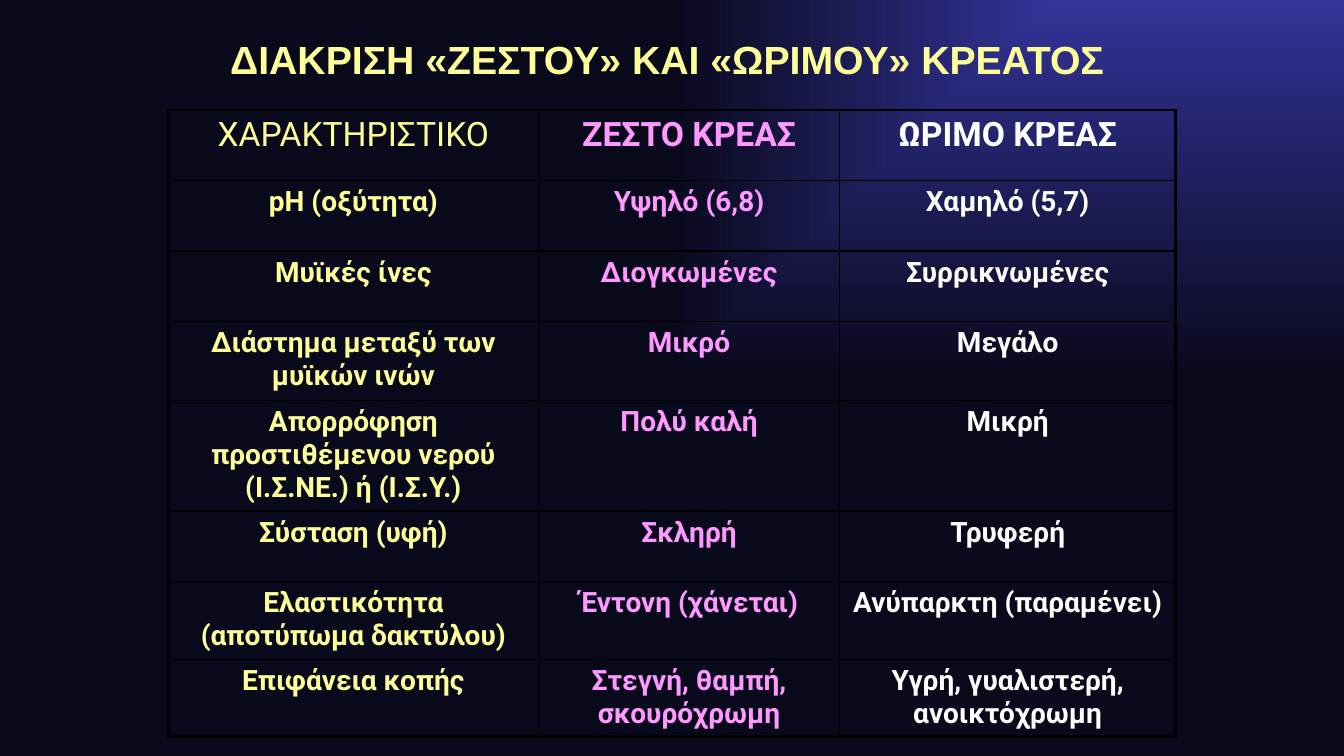
from lxml import etree
from pptx import Presentation
from pptx.dml.color import RGBColor
from pptx.enum.text import MSO_ANCHOR, MSO_AUTO_SIZE, PP_ALIGN
from pptx.oxml.ns import qn
from pptx.util import Inches, Pt

CENTER = PP_ALIGN.CENTER
MIDDLE = MSO_ANCHOR.MIDDLE
NO_AUTOFIT = MSO_AUTO_SIZE.NONE

TITLE = "ΔΙΑΚΡΙΣΗ «ΖΕΣΤΟΥ» ΚΑΙ «ΩΡΙΜΟΥ» ΚΡΕΑΤΟΣ "
ROWS = [
    ("ΧΑΡΑΚΤΗΡΙΣΤΙΚΟ", "ΖΕΣΤΟ ΚΡΕΑΣ", "ΩΡΙΜΟ ΚΡΕΑΣ"),
    ("pH (οξύτητα)", "Υψηλό (6,8)", "Χαμηλό (5,7)"),
    ("Μυϊκές ίνες", "Διογκωμένες", "Συρρικνωμένες"),
    ("Διάστημα μεταξύ των μυϊκών ινών", "Μικρό", "Μεγάλο"),
    ("Απορρόφηση προστιθέμενου νερού (Ι.Σ.ΝΕ.) ή (Ι.Σ.Υ.)", "Πολύ καλή", "Μικρή"),
    ("Σύσταση (υφή)", "Σκληρή", "Τρυφερή"),
    ("Ελαστικότητα (αποτύπωμα δακτύλου)", "Έντονη (χάνεται)", "Ανύπαρκτη (παραμένει)"),
    ("Επιφάνεια κοπής", "Στεγνή, θαμπή, σκουρόχρωμη", "Υγρή, γυαλιστερή, ανοικτόχρωμη"),
]
COLORS = {
    "glow": "333399",
    "night": "09091C",
    "trait": "FFFF99",
    "warm": "FF99FF",
    "mature": "FFFFFF",
    "border": "000000",
}
COLUMN_COLORS = ("trait", "warm", "mature")
COLUMN_WIDTHS = (3.67, 2.99, 3.33)
ROW_HEIGHTS = (0.7, 0.7, 0.7, 0.78, 1.1, 0.7, 0.77, 0.77)
OUTER_LINE, INNER_LINE = 2.25, 1


def color(name):
    return RGBColor.from_string(COLORS[name])


def paint_background(slide):
    """Fill the slide with a gradient that spreads from its top right corner."""
    fill = slide.background.fill
    fill.gradient()
    for stop, name in zip(fill.gradient_stops, ("glow", "night")):
        stop.color.rgb = color(name)
    linear = next(slide.background._cSld.iter(qn("a:lin")))
    spread = etree.Element(qn("a:path"), {"path": "rect"})
    etree.SubElement(spread, qn("a:fillToRect"), l="100000", b="100000")
    linear.getparent().replace(linear, spread)


def write(text_frame, text, font_name, size, color_name, bold):
    paragraph = text_frame.paragraphs[0]
    paragraph.alignment = CENTER
    run = paragraph.add_run()
    run.text = text
    run.font.name = font_name
    run.font.size = Pt(size)
    run.font.bold = bold
    run.font.color.rgb = color(color_name)


def draw_borders(cell, row, column):
    """Draw the four cell sides, thicker on the edge of the table."""
    on_edge = {
        "a:lnL": column == 0,
        "a:lnR": column == len(COLUMN_WIDTHS) - 1,
        "a:lnT": row == 0,
        "a:lnB": row == len(ROWS) - 1,
    }
    properties = cell._tc.get_or_add_tcPr()
    for position, (tag, outer) in enumerate(on_edge.items()):
        width = Pt(OUTER_LINE if outer else INNER_LINE)
        line = etree.Element(qn(tag), w=str(int(width)))
        solid = etree.SubElement(line, qn("a:solidFill"))
        etree.SubElement(solid, qn("a:srgbClr"), val=COLORS["border"])
        properties.insert(position, line)


def add_comparison_table(slide):
    frame = slide.shapes.add_table(
        len(ROWS), len(COLUMN_WIDTHS), Inches(1.67), Inches(1.09),
        Inches(sum(COLUMN_WIDTHS)), Inches(sum(ROW_HEIGHTS)))
    table = frame.table
    table.first_row = False
    table.horz_banding = False
    for table_column, width in zip(table.columns, COLUMN_WIDTHS):
        table_column.width = Inches(width)
    for table_row, height in zip(table.rows, ROW_HEIGHTS):
        table_row.height = Inches(height)
    for row, texts in enumerate(ROWS):
        for column, text in enumerate(texts):
            cell = table.cell(row, column)
            cell.fill.background()
            draw_borders(cell, row, column)
            size = 24 if row == 0 else 20
            bold = (row, column) != (0, 0)
            write(cell.text_frame, text, "Roboto", size, COLUMN_COLORS[column], bold)


def main():
    presentation = Presentation()
    presentation.slide_width = Inches(13.33)
    presentation.slide_height = Inches(7.5)
    slide = presentation.slides.add_slide(presentation.slide_layouts[5])
    paint_background(slide)

    title = slide.shapes.title
    title.left, title.top = Inches(2.17), Inches(0.3)
    title.width, title.height = Inches(9), Inches(0.56)
    title.text_frame.word_wrap = True
    title.text_frame.auto_size = NO_AUTOFIT
    title.text_frame.vertical_anchor = MIDDLE
    write(title.text_frame, TITLE, "Arial", 28, "trait", True)

    add_comparison_table(slide)
    presentation.save("out.pptx")


if __name__ == "__main__":
    main()
